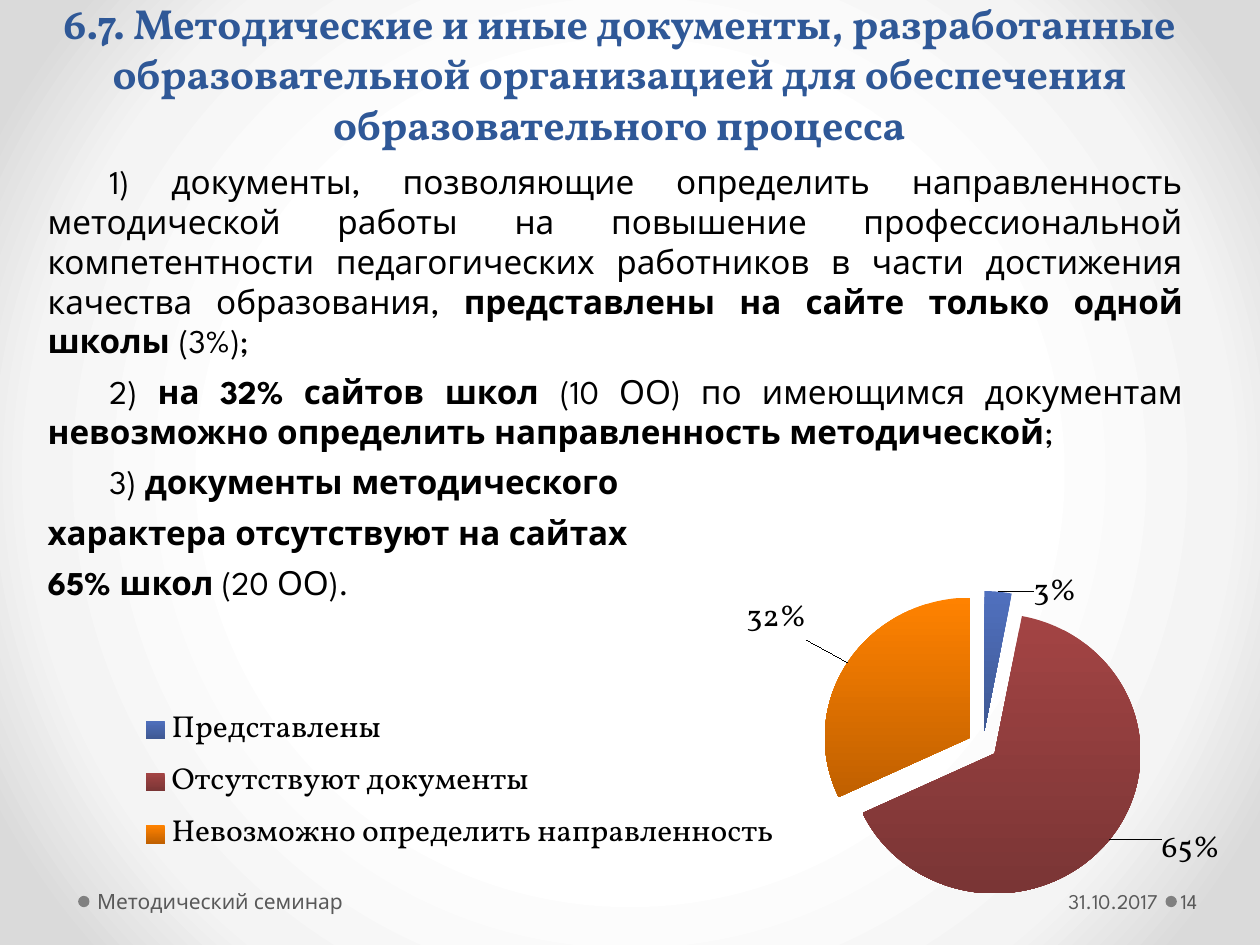
"""Build the slide on methodical documents with an exploded pie chart."""
from pptx import Presentation
from pptx import util as u
from pptx.chart.data import CategoryChartData
from pptx.dml.color import RGBColor
from pptx.enum import chart as charts, shapes, text
from pptx.oxml import parse_xml
from pptx.oxml.ns import nsdecls, qn

THEME = {
    "title": {"name": "Vollkorn", "size": 24, "color": "2F5897"},
    "body": {"name": "League Spartan", "size": 19, "color": "000000"},
    "chart": {"name": "Vollkorn", "size": 18, "color": "000000"},
    "footer": {"name": "League Spartan", "size": 12, "color": "595959"},
    "dot": "808080",
    "background": [(0, "FFFFFF"), (50, "FFFFFF"), (76, "F4F4F4"), (92, "DADADA")],
}
ALIGN = text.PP_ALIGN
ANCHOR = text.MSO_ANCHOR


def style_font(font, style, **extra):
    values = {**THEME[style], **extra}
    font.color.rgb = RGBColor.from_string(values.pop("color"))
    values["size"] = u.Pt(values["size"])
    for key, value in values.items():
        setattr(font, key, value)


def add_text(page, place, style, paragraphs, anchor, insets=(0.1, 0.05, 0.1, 0.05), **layout):
    frame = page.shapes.add_textbox(*map(u.Inches, place)).text_frame
    frame.word_wrap = True
    frame.vertical_anchor = anchor
    for side, inset in zip(("left", "top", "right", "bottom"), insets):
        setattr(frame, f"margin_{side}", u.Inches(inset))
    for index, (indent, spans) in enumerate(paragraphs):
        para = frame.add_paragraph() if index else frame.paragraphs[0]
        for key, value in layout.items():
            setattr(para, key, value)
        if indent:
            para._p.get_or_add_pPr().set("indent", str(u.Inches(indent)))
        for words, bold in spans:
            span = para.add_run()
            span.text = words
            style_font(span.font, style, bold=bold)


deck = Presentation()
deck.slide_width, deck.slide_height = u.Inches(10), u.Inches(7.5)
page = deck.slides.add_slide(deck.slide_layouts[6])

page.background.fill.gradient()
gradient = page._element.find(".//" + qn("a:gradFill"))
stops = "".join(
    f'<a:gs pos="{stop * 1000}"><a:srgbClr val="{color}"/></a:gs>' for stop, color in THEME["background"]
)
gradient.getparent().replace(gradient, parse_xml(
    f'<a:gradFill {nsdecls("a")} rotWithShape="1"><a:gsLst>{stops}</a:gsLst><a:path path="circle">'
    '<a:fillToRect l="50000" t="50000" r="50000" b="50000"/></a:path></a:gradFill>'
))

for left in (0.62, 9.25):
    dot = page.shapes.add_shape(shapes.MSO_SHAPE.OVAL, *map(u.Inches, (left, 7.11, 0.09, 0.09)))
    dot.shadow.inherit = False
    dot.fill.solid()
    dot.fill.fore_color.rgb = RGBColor.from_string(THEME["dot"])
    dot.line.fill.background()

body = [
    (0.49, [
        ("1) документы, позволяющие определить направленность методической работы на повышение "
         "профессиональной компетентности педагогических работников в части достижения качества "
         "образования, ", False),
        ("представлены на сайте только одной школы ", True),
        ("(3%);", False),
    ]),
    (0.49, [
        ("2) ", False),
        ("на 32% сайтов школ ", True),
        ("(10 ОО) по имеющимся документам ", False),
        ("невозможно определить направленность методической", True),
        (";", False),
    ]),
    (0.49, [("3) ", False), ("документы методического ", True)]),
    (0, [("характера отсутствуют на сайтах ", True)]),
    (0, [("65% школ", True), (" (20 ОО).", False)]),
]
add_text(page, (0.28, 1.23, 9.21, 4.65), "body", body, ANCHOR.TOP,
         alignment=ALIGN.JUSTIFY, space_after=u.Pt(6))

title = ("6.7. Методические и иные документы, разработанные образовательной организацией "
         "для обеспечения образовательного процесса")
add_text(page, (0.22, 0.13, 9.39, 1.1), "title", [(0, [(title, True)])], ANCHOR.BOTTOM,
         alignment=ALIGN.CENTER)

slices = [
    ("Представлены", 0.03, ("5070BE", "3F5993"), (0.03, 0.08)),
    ("Отсутствуют документы", 0.65, ("A34444", "7A3535"), (0.04, -0.04)),
    ("Невозможно определить направленность", 0.32, ("FF8200", "C06000"), (-0.03, -0.05)),
]
data = CategoryChartData(number_format="0%")
data.categories = [name for name, *_ in slices]
data.add_series("Series 1", [value for _, value, *_ in slices])
chart = page.shapes.add_chart(
    charts.XL_CHART_TYPE.PIE, *map(u.Inches, (0.59, 4.3, 9.13, 3.07)), data
).chart
style_font(chart.font, "chart")
chart.has_title = False
chart.has_legend = True
chart.legend.position = charts.XL_LEGEND_POSITION.BOTTOM
chart.legend.include_in_layout = False
chart.plots[0].vary_by_categories = True

series = chart.plots[0].series[0]
series._element.find(qn("c:tx")).addnext(parse_xml(f'<c:explosion {nsdecls("c")} val="10"/>'))
labels = series.data_labels
for key, value in {"show_value": True, "number_format": "0%", "number_format_is_linked": False,
                   "position": charts.XL_LABEL_POSITION.OUTSIDE_END}.items():
    setattr(labels, key, value)
style_font(labels.font, "chart")

layouts = [
    (chart._chartSpace.find(".//" + qn("c:plotArea")), 0,
     {"layoutTarget": "inner", "xMode": "edge", "yMode": "edge", "x": 0.64, "y": 0.09, "w": 0.3, "h": 0.83}),
    (chart.legend._element, 1,
     {"xMode": "edge", "yMode": "edge", "x": 0.045, "y": 0.38, "w": 0.58, "h": 0.45}),
]
for index, (_, _, colors, (shift_x, shift_y)) in enumerate(slices):
    point = series.points[index]
    point.format.fill.gradient()
    point.format.fill.gradient_angle = 270
    for stop, color in zip(point.format.fill.gradient_stops, colors):
        stop.color.rgb = RGBColor.from_string(color)
    point.data_label.position = charts.XL_LABEL_POSITION.OUTSIDE_END
    label = series._element.findall(".//" + qn("c:dLbl"))[index]
    layouts.append((label, 1, {"x": shift_x, "y": shift_y}))

for parent, place, values in layouts:
    for old in parent.findall(qn("c:layout")):
        parent.remove(old)
    parts = "".join(f'<c:{key} val="{value}"/>' for key, value in values.items())
    parent.insert(place, parse_xml(
        f'<c:layout {nsdecls("c")}><c:manualLayout>{parts}</c:manualLayout></c:layout>'
    ))

footers = [
    ("31.10.2017", (6.96, 6.95, 2.28, 0.4), (0.1, 0.05, 0.05, 0.05), ALIGN.RIGHT),
    ("Методический семинар", (0.72, 6.95, 3.11, 0.4), (0.05, 0.05, 0.1, 0.05), ALIGN.LEFT),
    ("14", (9.34, 6.95, 0.61, 0.4), (0.03, 0.05, 0.05, 0.05), ALIGN.LEFT),
]
for words, place, insets, alignment in footers:
    add_text(page, place, "footer", [(0, [(words, False)])], ANCHOR.MIDDLE, insets, alignment=alignment)

deck.save("out.pptx")
